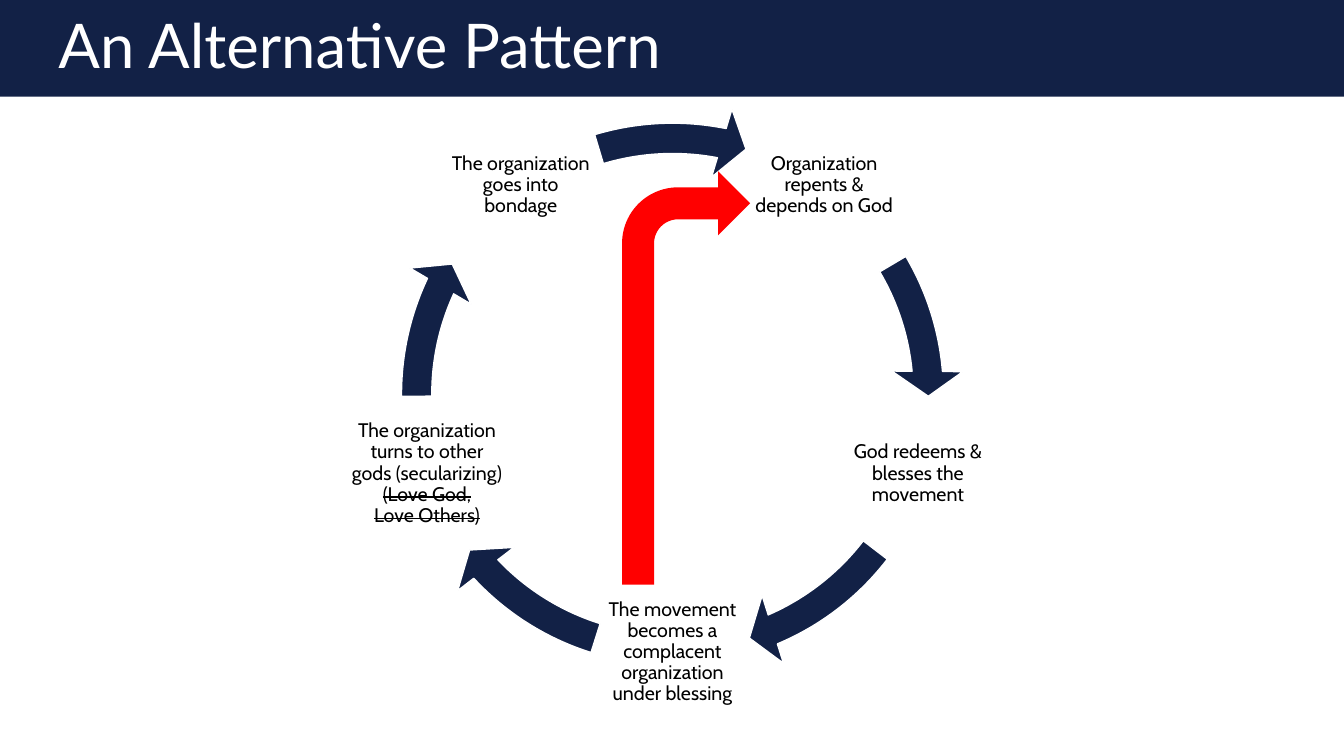
import math
from dataclasses import dataclass
from typing import Any

import pptx
import pptx.dml.color
import pptx.enum.shapes
import pptx.enum.text
import pptx.shapes.autoshape
import pptx.slide
import pptx.text.text
import pptx.util

Inches = pptx.util.Inches
Pt = pptx.util.Pt
RGBColor = pptx.dml.color.RGBColor
MSO_SHAPE = pptx.enum.shapes.MSO_SHAPE
PP_ALIGN = pptx.enum.text.PP_ALIGN
MSO_ANCHOR = pptx.enum.text.MSO_ANCHOR
MSO_AUTO_SIZE = pptx.enum.text.MSO_AUTO_SIZE

NAVY = RGBColor(0x12, 0x21, 0x46)
RED = RGBColor(0xFF, 0x00, 0x00)
WHITE = RGBColor(0xFF, 0xFF, 0xFF)
BLACK = RGBColor(0x00, 0x00, 0x00)

CENTER_X, CENTER_Y = 6.67, 3.91
CYCLE_RADIUS = 2.56
STAGE_SIZE = 1.54
RING_SIZE = 5.78
FIRST_ANGLE = -54
DEGREE = 0.6

TITLE_FONT = {"name": "Lato", "size": Pt(44), "bold": False}
STAGE_FONT = {"name": "Cabin", "size": Pt(14)}
STAGE_FRAME = {
    "word_wrap": True,
    "auto_size": MSO_AUTO_SIZE.NONE,
    "vertical_anchor": MSO_ANCHOR.MIDDLE,
    "margin_left": Inches(0.02),
    "margin_right": Inches(0.02),
    "margin_top": Inches(0.02),
    "margin_bottom": Inches(0.02),
}
TITLE_FRAME = {
    "word_wrap": True,
    "auto_size": MSO_AUTO_SIZE.NONE,
    "vertical_anchor": MSO_ANCHOR.MIDDLE,
}


@dataclass(frozen=True)
class Stage:
    text: str
    arrow_start: float
    arrow_end: float
    struck_lines: tuple[str, ...] = ()


STAGES = [
    Stage("Organization repents & depends on God", 329.44, 354.89),
    Stage("God redeems & blesses the movement", 37.56, 66.91),
    Stage("The movement becomes a complacent organization under blessing", 107.49, 136.85),
    Stage("The organization turns to other gods (secularizing)", 179.51, 204.97,
          ("(Love God,", "Love Others)")),
    Stage("The organization goes into bondage", 253.31, 281.1),
]


def apply_format(target: Any, values: dict[str, Any]) -> None:
    for attribute, value in values.items():
        setattr(target, attribute, value)


def add_run(paragraph: pptx.text.text._Paragraph, text: str, font: dict[str, Any],
            color: RGBColor, struck: bool = False) -> None:
    run = paragraph.add_run()
    run.text = text
    apply_format(run.font, font)
    run.font.color.rgb = color
    if struck:
        run._r.get_or_add_rPr().set("strike", "sngStrike")


def add_filled(slide: pptx.slide.Slide, kind: MSO_SHAPE, left: float, top: float,
               width: float, height: float, color: RGBColor) -> pptx.shapes.autoshape.Shape:
    shape = slide.shapes.add_shape(kind, Inches(left), Inches(top), Inches(width), Inches(height))
    shape.shadow.inherit = False
    shape.fill.solid()
    shape.fill.fore_color.rgb = color
    shape.line.fill.background()
    return shape


def add_title(slide: pptx.slide.Slide) -> None:
    title = slide.shapes.title
    apply_format(title, {"left": Inches(0.48), "top": Inches(0.11),
                         "width": Inches(12.26), "height": Inches(0.74)})
    apply_format(title.text_frame, TITLE_FRAME)
    heading = title.text_frame.paragraphs[0]
    apply_format(heading, {"alignment": PP_ALIGN.LEFT, "line_spacing": 0.9})
    add_run(heading, "An Alternative Pattern", TITLE_FONT, WHITE)
    band = add_filled(slide, MSO_SHAPE.RECTANGLE, 0, 0, 13.33, 0.96, NAVY)
    title.element.addprevious(band.element)


def add_stage(slide: pptx.slide.Slide, stage: Stage, angle: float) -> None:
    left = CENTER_X + CYCLE_RADIUS * math.cos(math.radians(angle)) - STAGE_SIZE / 2
    top = CENTER_Y + CYCLE_RADIUS * math.sin(math.radians(angle)) - STAGE_SIZE / 2
    label = slide.shapes.add_textbox(Inches(left), Inches(top),
                                     Inches(STAGE_SIZE), Inches(STAGE_SIZE))
    apply_format(label.text_frame, STAGE_FRAME)
    wording = label.text_frame.paragraphs[0]
    apply_format(wording, {"alignment": PP_ALIGN.CENTER, "line_spacing": 0.9})
    add_run(wording, stage.text, STAGE_FONT, BLACK)
    for line in stage.struck_lines:
        wording.add_line_break()
        add_run(wording, line, STAGE_FONT, BLACK, struck=True)


def add_cycle_arrow(slide: pptx.slide.Slide, stage: Stage) -> None:
    arrow = add_filled(slide, MSO_SHAPE.CIRCULAR_ARROW, CENTER_X - RING_SIZE / 2,
                       CENTER_Y - RING_SIZE / 2, RING_SIZE, RING_SIZE, NAVY)
    arrow.line.color.rgb = WHITE
    arrow.line.width = Pt(1)
    proportions = (0.052, 5.6 * DEGREE, stage.arrow_end * DEGREE,
                   stage.arrow_start * DEGREE, 0.061)
    for index, proportion in enumerate(proportions):
        arrow.adjustments[index] = proportion


def main() -> None:
    deck = pptx.Presentation()
    deck.slide_width, deck.slide_height = Inches(13.33), Inches(7.5)
    slide = deck.slides.add_slide(deck.slide_layouts[5])
    add_title(slide)
    for index, stage in enumerate(STAGES):
        add_stage(slide, stage, FIRST_ANGLE + index * 360 / len(STAGES))
        add_cycle_arrow(slide, stage)
    add_filled(slide, MSO_SHAPE.BENT_ARROW, 6.17, 1.7, 1.27, 4.1, RED)
    deck.save("out.pptx")


if __name__ == "__main__":
    main()
